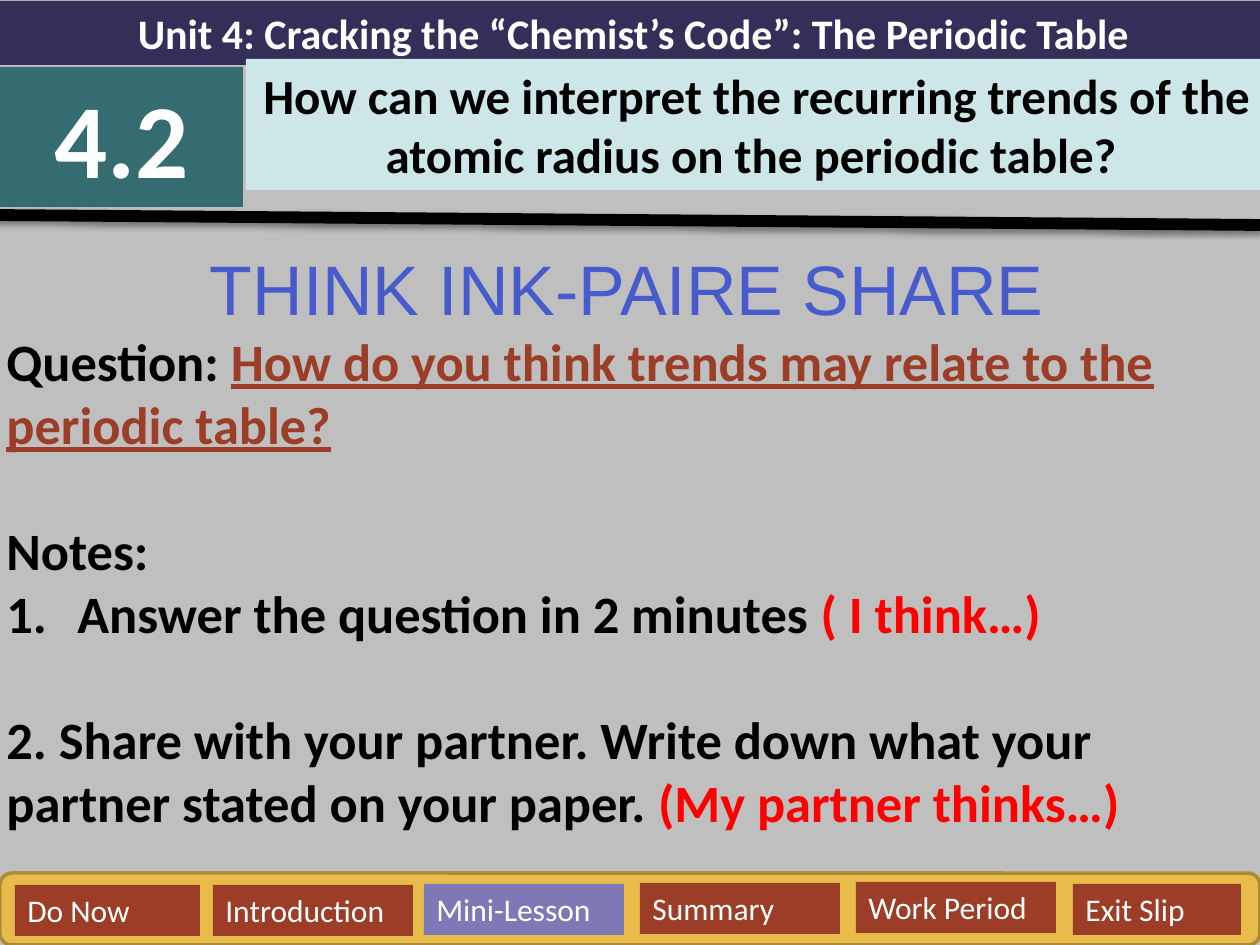
from dataclasses import dataclass

from lxml import etree
from pptx import Presentation
from pptx.dml.color import RGBColor
from pptx.enum import shapes, text
from pptx.oxml.ns import qn
from pptx.util import Emu, Pt

EMU_PER_PX = 914400 / 126


@dataclass(frozen=True)
class Theme:
    background: str = "BFBFBF"
    navy: str = "342F59"
    teal: str = "346C71"
    mist: str = "CDE6E8"
    gold: str = "E8BC4A"
    gold_edge: str = "AC8B37"
    rust: str = "9C3D28"
    violet: str = "7E78B7"
    blue: str = "475BCD"
    red: str = "FF0000"
    black: str = "000000"
    white: str = "FFFFFF"
    body_font: str = "Calibri"
    title_font: str = "Arial"
    unit_size: int = 24
    number_size: int = 60
    aim_size: int = 28
    title_size: int = 40
    body_size: int = 30
    nav_size: int = 18


THEME = Theme()


def px(length):
    return Emu(round(length * EMU_PER_PX))


def add_run(paragraph, words, size, color, name=THEME.body_font, **styles):
    run = paragraph.add_run()
    run.text = words
    formats = {"size": Pt(size), "name": name, **styles}
    for attribute, value in formats.items():
        setattr(run.font, attribute, value)
    run.font.color.rgb = RGBColor.from_string(color)


def add_panel(parent, box, fill, edge=None, kind=shapes.MSO_SHAPE.RECTANGLE):
    panel = parent.add_shape(kind, *map(px, box))
    panel.shadow.inherit = False
    panel.fill.solid()
    panel.fill.fore_color.rgb = RGBColor.from_string(fill)
    if edge:
        panel.line.color.rgb = RGBColor.from_string(edge)
        panel.line.width = Pt(2)
    else:
        panel.line.fill.background()
    return panel


def open_text(shape):
    frame = shape.text_frame
    frame.word_wrap = True
    frame.auto_size = text.MSO_AUTO_SIZE.SHAPE_TO_FIT_TEXT
    frame.vertical_anchor = text.MSO_ANCHOR.TOP
    return frame


def add_label(parent, box, fill, words, size, align, **styles):
    frame = open_text(add_panel(parent, box, fill))
    paragraph = frame.paragraphs[0]
    paragraph.alignment = align
    add_run(paragraph, words, size, **styles)


def add_header(slide, left, top, width):
    """Unit banner, lesson number, guiding question and the rule below."""
    center = text.PP_ALIGN.CENTER
    labels = [
        ((left, top + 1, width, 64), THEME.navy, THEME.unit_size, THEME.white,
         "Unit 4: Cracking the “Chemist’s Code”: The Periodic Table"),
        ((left, top + 67, 243, 140), THEME.teal, THEME.number_size,
         THEME.white, "4.2"),
        ((left + 246, top + 59, width - 246, 131), THEME.mist, THEME.aim_size,
         THEME.black, "How can we interpret the recurring trends of the "
         "atomic radius on the periodic table? "),
    ]
    for box, fill, size, color, words in labels:
        add_label(slide.shapes, box, fill, words, size, center,
                  color=color, bold=True)

    # Heavy rule with a soft shadow
    ends = (left - 6, top + 215, left + 1260, top + 225)
    rule = slide.shapes.add_connector(shapes.MSO_CONNECTOR.STRAIGHT,
                                      *map(px, ends))
    rule.line.width = Pt(6.75)
    rule.line.color.rgb = RGBColor.from_string(THEME.black)
    effects = etree.SubElement(rule._element.spPr, qn("a:effectLst"))
    shadow = etree.SubElement(effects, qn("a:outerShdw"), blurRad="39370",
                              dist="20320", dir="5400000", rotWithShape="0")
    shade = etree.SubElement(shadow, qn("a:srgbClr"), val=THEME.black)
    etree.SubElement(shade, qn("a:alpha"), val="38000")


def add_navigation(slide, left, top, width, height):
    """Gold bar holding the lesson stages, the current one in violet."""
    group = slide.shapes.add_group_shape().shapes
    add_panel(group, (left, top, width, height), THEME.gold, THEME.gold_edge,
              shapes.MSO_SHAPE.ROUNDED_RECTANGLE)
    stages = [  # name, left, top, width
        ("Do Now", 15, 12, 185),
        ("Introduction", 213, 12, 200),
        ("Mini-Lesson", 424, 11, 200),
        ("Summary", 640, 10, 200),
        ("Work Period", 856, 9, 200),
        ("Exit Slip", 1073, 11, 168),
    ]
    for name, x, y, stage_width in stages:
        fill = THEME.violet if name == "Mini-Lesson" else THEME.rust
        add_label(group, (left + x, top + y, stage_width, 51), fill, name,
                  THEME.nav_size, text.PP_ALIGN.LEFT, color=THEME.white)


def add_activity(slide, box):
    """Activity title, question and numbered notes."""
    frame = open_text(slide.shapes.add_textbox(*map(px, box)))
    title = frame.paragraphs[0]
    title.alignment = text.PP_ALIGN.CENTER
    add_run(title, "THINK INK-PAIRE SHARE", THEME.title_size, THEME.blue,
            THEME.title_font)

    # Each line: space before in points, then words with colour and underline
    lines = [
        (0, [("Question: ", THEME.black, False),
             ("How do you think trends may relate to the periodic table?",
              THEME.rust, True)]),
        (36, [("Notes:", THEME.black, False)]),
        (0, [("Answer the question in 2 minutes ", THEME.black, False),
             ("( I think…)", THEME.red, False)]),
        (36, [("2. Share with your partner. Write down what your partner "
               "stated on your paper. ", THEME.black, False),
              ("(My partner thinks…)", THEME.red, False)]),
    ]
    paragraphs = []
    for gap, parts in lines:
        paragraph = frame.add_paragraph()
        paragraph.space_before = Pt(gap)
        for words, color, underline in parts:
            add_run(paragraph, words, THEME.body_size, color,
                    bold=True, underline=underline)
        paragraphs.append(paragraph)

    # Hanging number on the first note
    numbering = paragraphs[2]._p.get_or_add_pPr()
    indent = px(71)
    numbering.set("marL", str(indent))
    numbering.set("indent", str(-indent))
    etree.SubElement(numbering, qn("a:buAutoNum"), type="arabicPeriod")


def main():
    deck = Presentation()
    deck.slide_width, deck.slide_height = px(1260), px(945)
    slide = deck.slides.add_slide(deck.slide_layouts[6])
    slide.background.fill.solid()
    slide.background.fill.fore_color.rgb = RGBColor.from_string(
        THEME.background)

    add_header(slide, 0, 0, 1267)
    add_navigation(slide, 0, 873, 1260, 72)
    add_activity(slide, (-6, 239, 1266, 680))
    deck.save("out.pptx")


if __name__ == "__main__":
    main()
